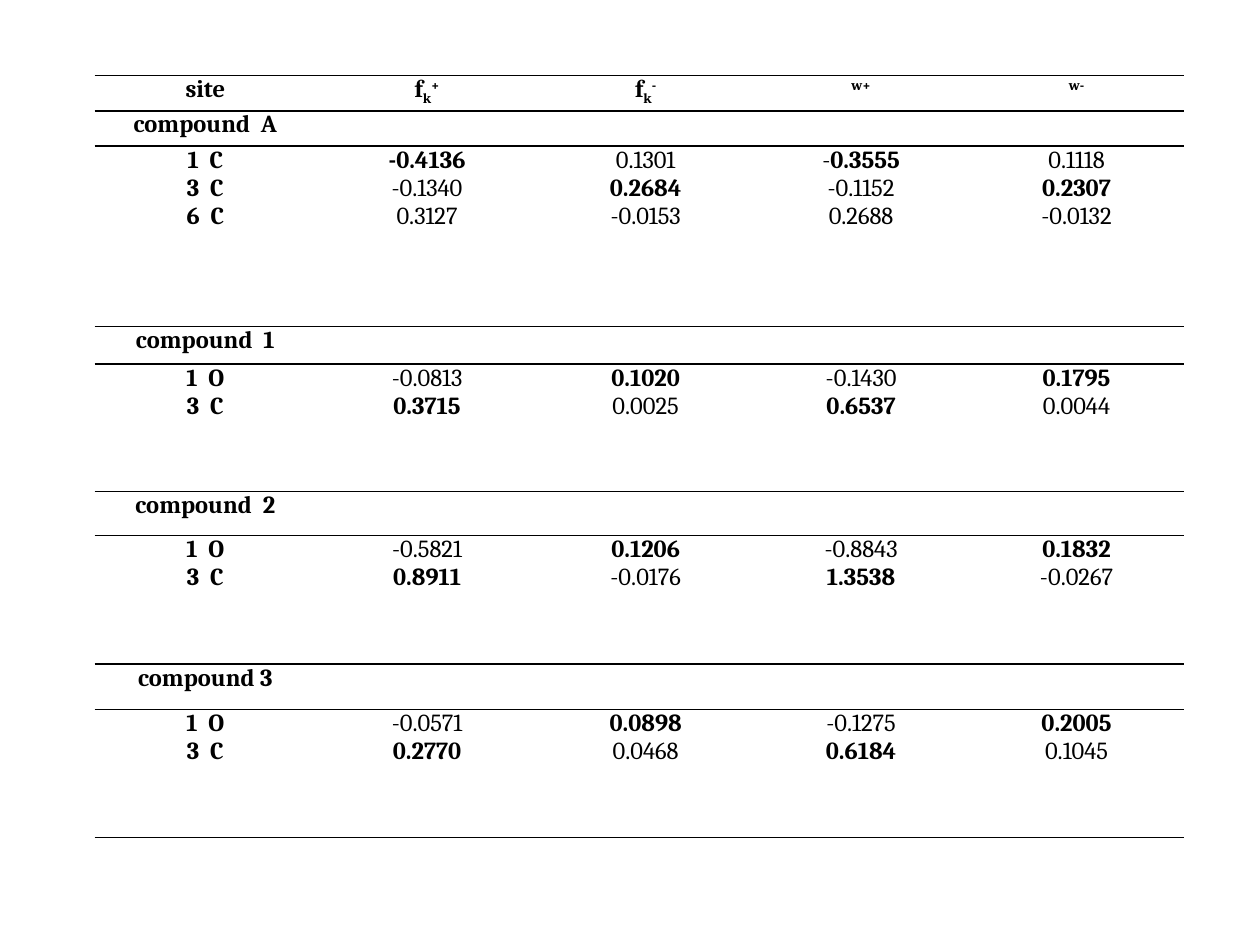
from dataclasses import dataclass

from lxml.etree import SubElement
from pptx import Presentation
from pptx.dml.color import RGBColor
from pptx.enum.text import PP_ALIGN
from pptx.oxml.ns import qn
from pptx.util import Inches, Pt

SUB, SUPER = -25000, 30000
HEADER = [
    [("site", 0)],
    [("f", 0), ("k", SUB), ("+", SUPER)],
    [("f", 0), ("k", SUB), ("-", SUPER)],
    [("w+", SUPER)],
    [("w-", SUPER)],
]

# Text after an asterisk is bold.
COMPOUNDS = [
    ("compound  A", 0.28, 1.43, [
        ("*1  C", "*-0.4136", "0.1301", "-*0.3555", "0.1118"),
        ("*3  C", "-0.1340", "*0.2684", "-0.1152", "*0.2307"),
        ("*6  C", "0.3127", "-0.0153", "0.2688", "-0.0132"),
    ]),
    ("compound  1", 0.3, 1.01, [
        ("*1  O", "-0.0813", "*0.1020", "-0.1430", "*0.1795"),
        ("*3  C", "*0.3715", "0.0025", "*0.6537", "0.0044"),
    ]),
    ("compound  2", 0.35, 1.02, [
        ("*1  O", "-0.5821", "*0.1206", "-0.8843", "*0.1832"),
        ("*3  C", "*0.8911", "-0.0176", "*1.3538", "-0.0267"),
    ]),
    ("compound 3", 0.36, 1.02, [
        ("*1  O", "-0.0571", "*0.0898", "-0.1275", "*0.2005"),
        ("*3  C", "*0.2770", "0.0468", "*0.6184", "0.1045"),
    ]),
]
HEADER_HEIGHT = 0.28
COLUMN_WIDTHS = [1.76, 1.76, 1.71, 1.71, 1.71]
LEFT, TOP = 0.75, 0.6


@dataclass(frozen=True)
class Theme:
    font: str = "Cambria"
    size: int = 14
    ink: str = "000000"
    rule: int = 1
    side_margin: float = 0.07


THEME = Theme()


def split_bold(text):
    """Turn marked text into (text, bold, baseline) runs."""
    plain, _, bold = text.partition("*")
    return [(part, weight, 0) for part, weight in ((plain, False), (bold, True)) if part]


def table_rows():
    """Yield each row as its height and cells; a cell is a list of paragraphs of runs."""
    yield HEADER_HEIGHT, [[[(text, True, base) for text, base in runs]] for runs in HEADER]
    for name, name_height, height, sites in COMPOUNDS:
        yield name_height, [[[(name, True, 0)]]] + [[[]]] * (len(HEADER) - 1)
        yield height, [[split_bold(text) for text in column] for column in zip(*sites)]


def rule_cell(cell):
    """Draw rules above and below the cell and none at its sides."""
    properties = cell._tc.get_or_add_tcPr()
    for side in ("lnL", "lnR", "lnT", "lnB"):
        line = SubElement(properties, qn(f"a:{side}"), w=str(Pt(THEME.rule)))
        if side in ("lnL", "lnR"):
            SubElement(line, qn("a:noFill"))
        else:
            fill = SubElement(line, qn("a:solidFill"))
            SubElement(fill, qn("a:srgbClr"), val=THEME.ink)


def write_paragraph(paragraph, runs):
    paragraph.alignment = PP_ALIGN.CENTER
    for text, bold, baseline in runs:
        run = paragraph.add_run()
        run.text = text
        font = run.font
        font.name, font.size, font.bold = THEME.font, Pt(THEME.size), bold
        font.color.rgb = RGBColor.from_string(THEME.ink)
        if baseline:
            font._element.set("baseline", str(baseline))
    if not runs:  # keeps an empty cell from stretching its row
        SubElement(paragraph._p, qn("a:endParaRPr"), sz=str(THEME.size * 100))


def fill_cell(cell, paragraphs):
    rule_cell(cell)
    cell.fill.background()
    cell.margin_left = cell.margin_right = Inches(THEME.side_margin)
    cell.margin_top = cell.margin_bottom = 0
    frame = cell.text_frame
    for index, runs in enumerate(paragraphs):
        write_paragraph(frame.add_paragraph() if index else frame.paragraphs[0], runs)


def main():
    presentation = Presentation()
    presentation.slide_width, presentation.slide_height = Inches(10), Inches(7.5)
    slide = presentation.slides.add_slide(presentation.slide_layouts[6])

    rows = list(table_rows())
    table = slide.shapes.add_table(
        len(rows), len(COLUMN_WIDTHS), Inches(LEFT), Inches(TOP),
        Inches(sum(COLUMN_WIDTHS)), Inches(sum(height for height, _ in rows)),
    ).table
    table.first_row = table.horz_banding = False
    for column, width in zip(table.columns, COLUMN_WIDTHS):
        column.width = Inches(width)
    for row, (height, cells) in zip(table.rows, rows):
        row.height = Inches(height)
        for cell, paragraphs in zip(row.cells, cells):
            fill_cell(cell, paragraphs)

    presentation.save("out.pptx")


if __name__ == "__main__":
    main()
